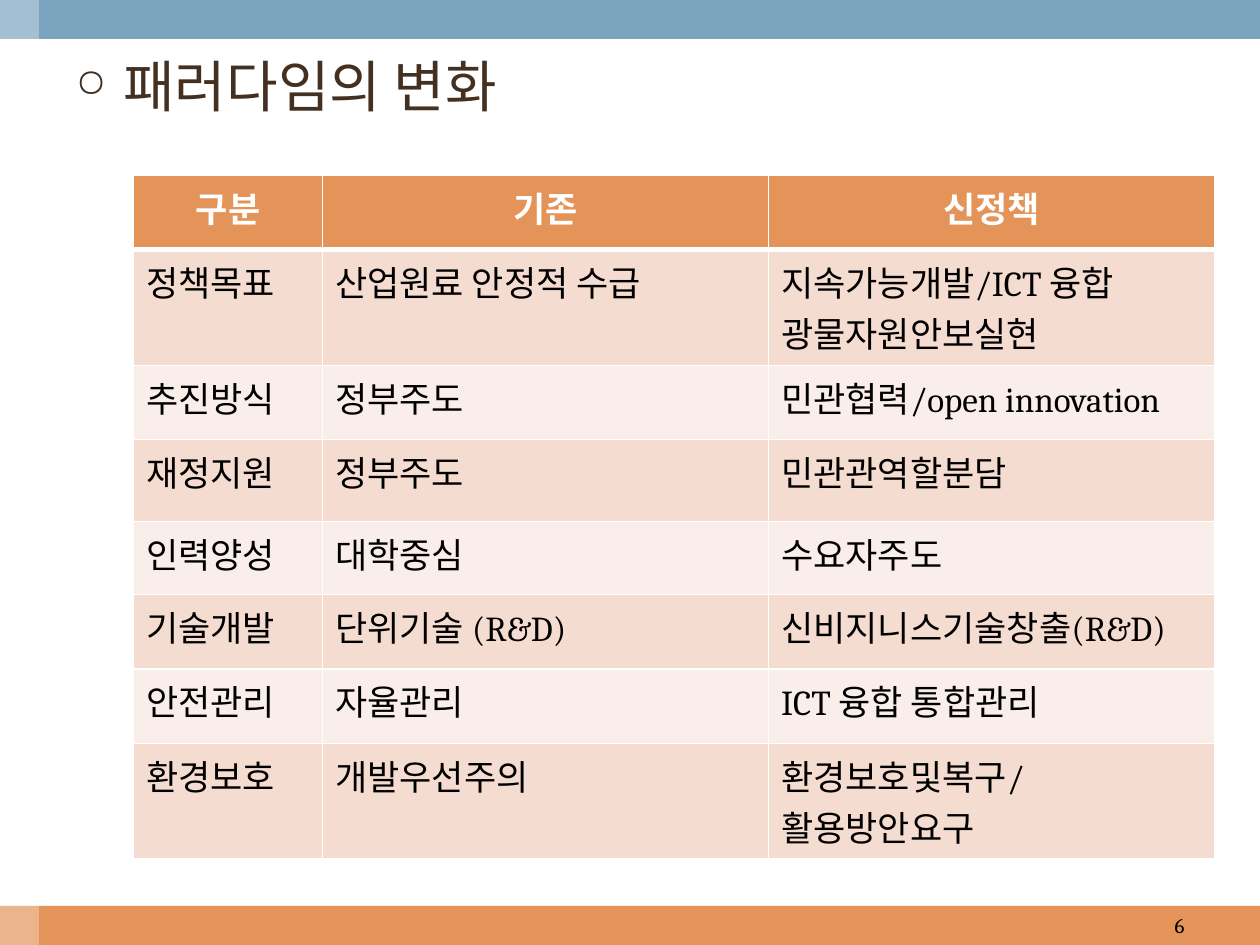
from lxml.etree import SubElement
from pptx import Presentation
from pptx.dml.color import RGBColor
from pptx.enum.shapes import MSO_SHAPE
from pptx.enum.text import MSO_ANCHOR, MSO_AUTO_SIZE, PP_ALIGN
from pptx.oxml import parse_xml
from pptx.oxml.ns import nsdecls, qn
from pptx.util import Inches, Pt

FONT = "Cambria"
COLORS = {
    "orange": "E49458",
    "blue": "7BA5BE",
    "white": "FFFFFF",
    "black": "000000",
    "brown": "433021",
    "band_dark": "F5DCD1",
    "band_light": "FAEEEA",
}
COLUMN_WIDTHS = [1.5, 3.54, 3.54]
ROW_HEIGHTS = [0.59, 0.92, 0.59, 0.65, 0.58, 0.59, 0.59, 0.92]
ROWS = [
    ("구분", "기존", "신정책"),
    ("정책목표", "산업원료 안정적 수급", "지속가능개발/ICT 융합 광물자원안보실현"),
    ("추진방식", "정부주도", "민관협력/open innovation"),
    ("재정지원", "정부주도", "민관관역할분담"),
    ("인력양성", "대학중심", "수요자주도"),
    ("기술개발", "단위기술 (R&D)", "신비지니스기술창출(R&D)"),
    ("안전관리", "자율관리", "ICT 융합 통합관리"),
    ("환경보호", "개발우선주의", "환경보호및복구/\n활용방안요구"),
]


def color(name):
    return RGBColor.from_string(COLORS[name])


def write_text(frame, text, size=20, color_name="black", bold=False, align=PP_ALIGN.LEFT):
    frame.text = text
    for paragraph in frame.paragraphs:
        paragraph.alignment = align
        for run in paragraph.runs:
            run.font.name = FONT
            run.font.size = Pt(size)
            run.font.bold = bold
            run.font.color.rgb = color(color_name)


def add_band(slide, left, top, width, height, color_name, opacity=None):
    shape = slide.shapes.add_shape(
        MSO_SHAPE.RECTANGLE, Inches(left), Inches(top), Inches(width), Inches(height)
    )
    shape.shadow.inherit = False
    shape.line.fill.background()
    shape.fill.solid()
    shape.fill.fore_color.rgb = color(color_name)
    if opacity is not None:
        fill_color = shape.fill._xPr.find(qn("a:solidFill"))[0]
        SubElement(fill_color, qn("a:alpha"), val=str(opacity * 1000))


def add_frame_bands(slide, width, height, thickness):
    add_band(slide, 0, height - thickness, width, thickness, "orange")
    add_band(slide, 0, 0, width, thickness, "blue")
    add_band(slide, 0, 0, thickness, height, "white", opacity=30)


def add_page_number(slide, left, top, width, height):
    box = slide.shapes.add_textbox(Inches(left), Inches(top), Inches(width), Inches(height))
    frame = box.text_frame
    frame.word_wrap = True
    frame.vertical_anchor = MSO_ANCHOR.MIDDLE
    write_text(frame, "6", size=12, align=PP_ALIGN.RIGHT)


def place_title(slide, left, top, width, height):
    title = slide.shapes.title
    title.left, title.top = Inches(left), Inches(top)
    title.width, title.height = Inches(width), Inches(height)
    frame = title.text_frame
    frame.auto_size = MSO_AUTO_SIZE.NONE
    frame.vertical_anchor = MSO_ANCHOR.TOP
    write_text(frame, "패러다임의 변화", size=32, color_name="brown")
    paragraph = frame.paragraphs[0]
    paragraph.space_before = Pt(6.4)
    properties = paragraph._p.get_or_add_pPr()
    properties.set("marL", str(Inches(0.38)))
    properties.set("indent", str(-Inches(0.38)))
    SubElement(properties, qn("a:buSzPct"), val="70000")
    SubElement(properties, qn("a:buChar"), char="○")


def set_borders(cell, bottom=1, top=1):
    properties = cell._tc.get_or_add_tcPr()
    widths = {"lnL": 1, "lnR": 1, "lnT": top, "lnB": bottom}
    for index, (side, width) in enumerate(widths.items()):
        properties.insert(index, parse_xml(
            f'<a:{side} {nsdecls("a")} w="{Pt(width)}"><a:solidFill>'
            f'<a:srgbClr val="{COLORS["white"]}"/></a:solidFill></a:{side}>'
        ))


def add_policy_table(slide, left, top):
    table = slide.shapes.add_table(
        len(ROWS), len(COLUMN_WIDTHS), Inches(left), Inches(top),
        Inches(sum(COLUMN_WIDTHS)), Inches(sum(ROW_HEIGHTS)),
    ).table
    for column, width in zip(table.columns, COLUMN_WIDTHS):
        column.width = Inches(width)
    for row_index, (row, height) in enumerate(zip(table.rows, ROW_HEIGHTS)):
        row.height = Inches(height)
        header = row_index == 0
        band = "orange" if header else "band_dark" if row_index % 2 else "band_light"
        for cell, text in zip(row.cells, ROWS[row_index]):
            cell.fill.solid()
            cell.fill.fore_color.rgb = color(band)
            set_borders(cell, bottom=3 if header else 1, top=3 if row_index == 1 else 1)
            write_text(
                cell.text_frame, text, bold=header,
                color_name="white" if header else "black",
                align=PP_ALIGN.CENTER if header else PP_ALIGN.LEFT,
            )


def main():
    presentation = Presentation()
    presentation.slide_width = Inches(10)
    presentation.slide_height = Inches(7.5)
    slide = presentation.slides.add_slide(presentation.slide_layouts[5])
    add_frame_bands(slide, 10, 7.5, 0.31)
    add_page_number(slide, 7.17, 7.19, 2.33, 0.31)
    place_title(slide, 0.5, 0.36, 9, 0.9)
    add_policy_table(slide, 1.06, 1.39)
    presentation.save("out.pptx")


if __name__ == "__main__":
    main()
